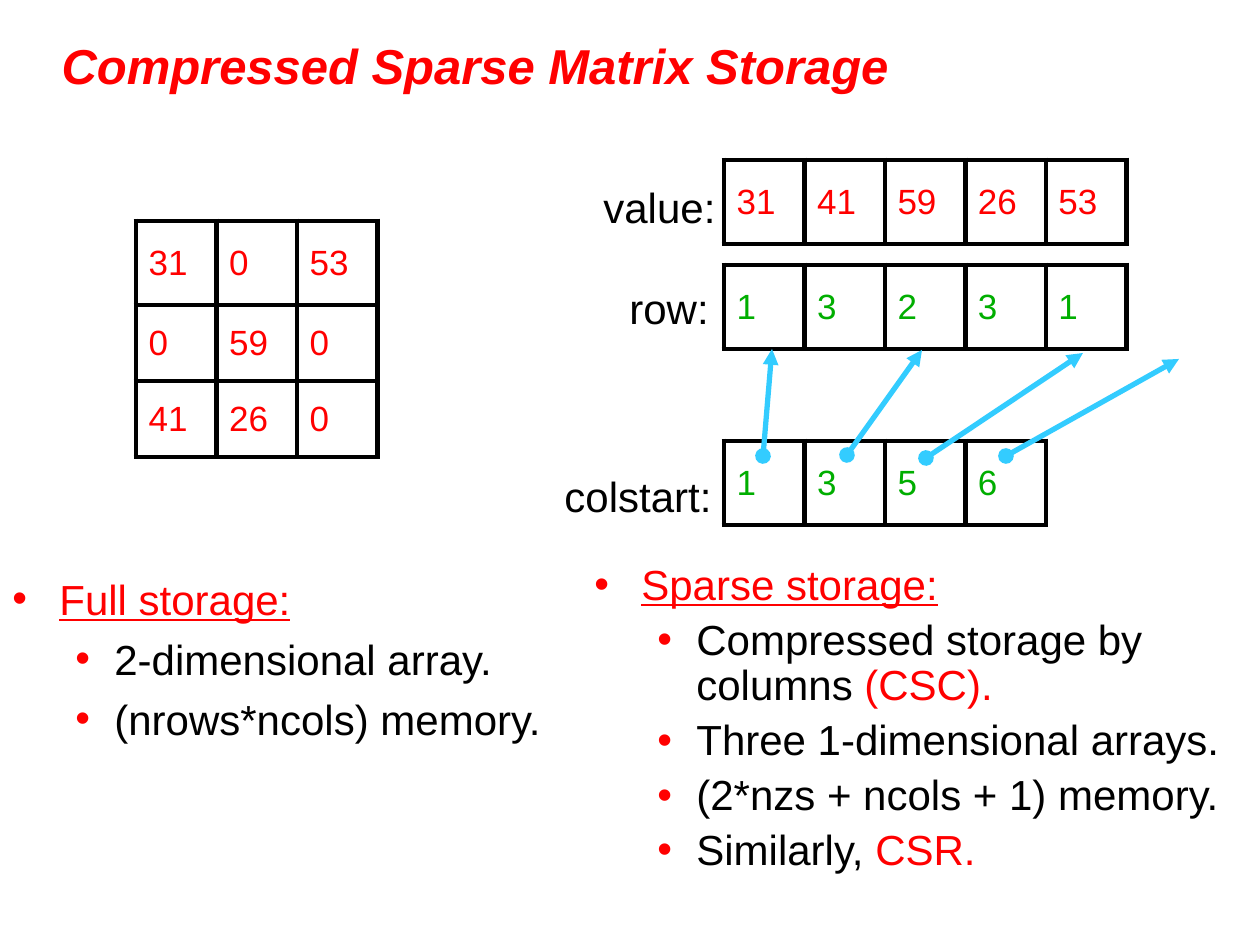
from lxml import etree
from pptx import Presentation
from pptx.dml.color import RGBColor
from pptx.enum.shapes import MSO_CONNECTOR
from pptx.enum.text import MSO_ANCHOR, PP_ALIGN
from pptx.oxml.ns import qn
from pptx.util import Inches, Pt

PX = Inches(1) / 126
RED = RGBColor(0xFF, 0, 0)
GREEN = RGBColor(0, 0xAE, 0)
BLACK = RGBColor(0, 0, 0)
SKY = RGBColor(0x33, 0xCC, 0xFF)
STRAIGHT = MSO_CONNECTOR.STRAIGHT
MIDDLE = MSO_ANCHOR.MIDDLE
LEFT = PP_ALIGN.LEFT
FONT = "Arial"
CELL_WIDTH = 161 / 2
ROW_HEIGHT = 84


def px(*lengths):
    return [round(length * PX) for length in lengths]


def set_font(font, size, color=None):
    font.name = FONT
    font.size = Pt(size)
    if color is not None:
        font.color.rgb = color


def add_title(slide, box, text):
    title = slide.shapes.title
    title.left, title.top, title.width, title.height = px(*box)
    title.text_frame.text = text
    title.text_frame.vertical_anchor = MIDDLE
    paragraph = title.text_frame.paragraphs[0]
    paragraph.alignment = LEFT
    set_font(paragraph.font, 28, RED)
    paragraph.font.bold = paragraph.font.italic = True


def add_border(cell):
    properties = cell._tc.get_or_add_tcPr()
    for side in ("a:lnL", "a:lnR", "a:lnT", "a:lnB"):
        line = etree.SubElement(properties, qn(side), w=str(Pt(3)))
        fill = etree.SubElement(line, qn("a:solidFill"))
        etree.SubElement(fill, qn("a:srgbClr"), val=str(BLACK))


def add_grid(slide, left, top, rows, color, heights=(ROW_HEIGHT,)):
    columns = len(rows[0])
    box = px(left, top, columns * CELL_WIDTH, sum(heights))
    table = slide.shapes.add_table(len(rows), columns, *box).table
    table.first_row = table.horz_banding = False
    for column in table.columns:
        column.width = px(CELL_WIDTH)[0]
    for row, height in zip(table.rows, heights):
        row.height = px(height)[0]
    for row, values in zip(table.rows, rows):
        for cell, value in zip(row.cells, values):
            cell.text = str(value)
            cell.vertical_anchor = MIDDLE
            set_font(cell.text_frame.paragraphs[0].font, 20, color)
            add_border(cell)
            cell.fill.background()


def add_label(slide, box, text):
    frame = slide.shapes.add_textbox(*px(*box)).text_frame
    frame.word_wrap = False
    frame.text = text
    set_font(frame.paragraphs[0].font, 24, BLACK)


def add_bullet(paragraph, margin, indent):
    properties = paragraph._p.get_or_add_pPr()
    margin, indent = px(margin, indent)
    properties.set("marL", str(margin))
    properties.set("indent", str(indent))
    color = etree.SubElement(properties, qn("a:buClr"))
    etree.SubElement(color, qn("a:srgbClr"), val=str(RED))
    etree.SubElement(properties, qn("a:buFont"), typeface=FONT)
    etree.SubElement(properties, qn("a:buChar"), char="•")


def add_bullets(slide, box, heading, items, line_spacing):
    frame = slide.shapes.add_textbox(*px(*box)).text_frame
    frame.word_wrap = True
    for index, parts in enumerate([[(heading, RED)]] + items):
        paragraph = frame.add_paragraph() if index else frame.paragraphs[0]
        paragraph.line_spacing = line_spacing
        paragraph.space_before = Pt(5.5)
        paragraph.level = 1 if index else 0
        add_bullet(paragraph, *((102, -39) if index else (47, -47)))
        set_font(paragraph.font, 24)
        paragraph.font.underline = index == 0
        for text, color in parts:
            run = paragraph.add_run()
            run.text = text
            run.font.color.rgb = color


def add_pointer(slide, start, end):
    connector = slide.shapes.add_connector(STRAIGHT, *px(*start, *end))
    connector.line.color.rgb = SKY
    connector.line.width = Pt(3)
    line = connector.line._get_or_add_ln()
    etree.SubElement(line, qn("a:headEnd"), type="oval")
    etree.SubElement(line, qn("a:tailEnd"), type="triangle")
    etree.SubElement(connector._element.spPr, qn("a:effectLst"))


def add_full_storage(slide, left, top):
    matrix = [(31, 0, 53), (0, 59, 0), (41, 26, 0)]
    add_grid(slide, left + 136, top, matrix, RED, (ROW_HEIGHT, 76, 76))
    items = [[("2-dimensional array.", BLACK)],
             [("(nrows*ncols) memory.", BLACK)]]
    add_bullets(slide, (left, top + 346, 598, 305), "Full storage:", items, 1.0)


def add_sparse_storage(slide, left, top):
    arrays = [
        ("value:", (39, 15, 137, 63), 0, (31, 41, 59, 26, 53), RED),
        ("row:", (65, 116, 105, 63), 105, (1, 3, 2, 3, 1), GREEN),
        ("colstart:", (0, 304, 173, 63), 281, (1, 3, 5, 6), GREEN),
    ]
    for label, (x, y, width, height), offset, values, color in arrays:
        add_label(slide, (left + x, top + y, width, height), label)
        add_grid(slide, left + 172, top + offset, [values], color)
    pointers = [((211, 296), (220, 189)), ((295, 295), (370, 190)),
                ((374, 298), (531, 193)), ((454, 296), (627, 199))]
    for ends in pointers:
        add_pointer(slide, *[(left + x, top + y) for x, y in ends])
    items = [
        [("Compressed storage by columns ", BLACK), ("(CSC).", RED)],
        [("Three 1-dimensional arrays.", BLACK)],
        [("(2*nzs + ncols + 1) memory.", BLACK)],
        [("Similarly, ", BLACK), ("CSR.", RED)],
    ]
    add_bullets(slide, (left + 30, top + 398, 662, 368),
                "Sparse storage:", items, 0.9)


def main():
    presentation = Presentation()
    presentation.slide_width, presentation.slide_height = px(1260, 945)
    slide = presentation.slides.add_slide(presentation.slide_layouts[5])
    add_title(slide, (49, 23, 1176, 84), "Compressed Sparse Matrix Storage")
    add_full_storage(slide, 0, 221)
    add_sparse_storage(slide, 552, 160)
    presentation.save("out.pptx")


if __name__ == "__main__":
    main()
